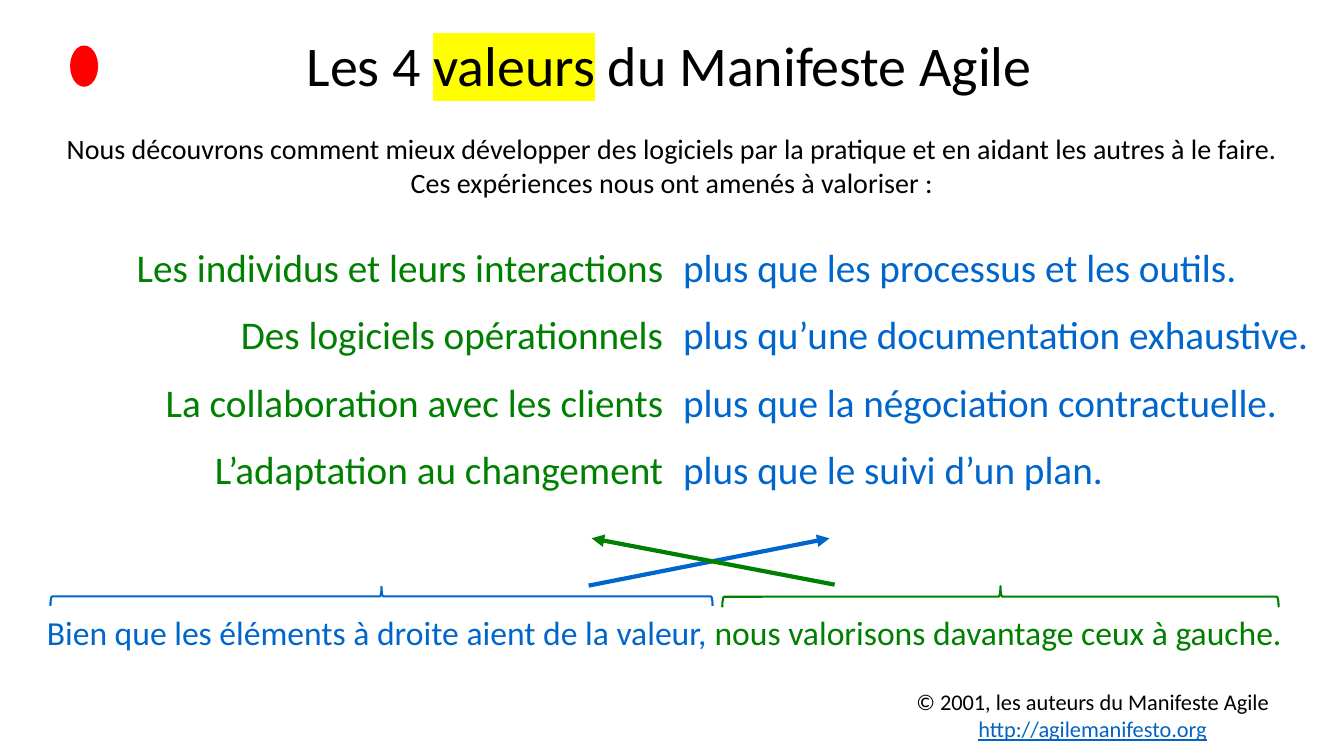
from dataclasses import dataclass

from lxml import etree
from pptx import Presentation
from pptx.dml.color import RGBColor
from pptx.enum import shapes, text
from pptx.oxml import ns
from pptx.util import Pt


@dataclass(frozen=True)
class Theme:
    font: str = "Calibri"
    black: str = "000000"
    left: str = "008000"
    right: str = "0066CC"
    web: str = "0563C1"
    dot: str = "FF0000"
    marker: str = "FFFF00"
    title: int = 40
    values: int = 28
    closing: int = 24
    intro: int = 20
    credit: int = 16


T = Theme()

# Content: a paragraph is a list of runs (words, colour, optional style)
TITLE = [[("Les 4 ", T.black), ("valeurs", T.black, "marked"),
          (" du Manifeste Agile", T.black)]]
INTRO = [
    [("Nous découvrons comment mieux développer des logiciels par la pratique "
      "et en aidant les autres à le faire.", T.black)],
    [("Ces expériences nous ont amenés à valoriser :", T.black)],
]
VALUES = [
    ("Les individus et leurs interactions", "plus que les processus et les outils."),
    ("Des logiciels opérationnels", "plus qu’une documentation exhaustive."),
    ("La collaboration avec les clients", "plus que la négociation contractuelle."),
    ("L’adaptation au changement", "plus que le suivi d’un plan."),
]
CLOSING = [[("Bien que les éléments à droite aient de la valeur, ", T.right),
            ("nous valorisons davantage ceux à gauche.", T.left)]]
CREDIT = [
    [("© 2001, les auteurs du Manifeste Agile", T.black)],
    [("http://agilemanifesto.org", T.web, "underlined")],
]

# Layout, in points
TEXTS = [  # paragraphs, size, (left, top, width, height)
    (INTRO, T.intro, (0, 90.5, 960, 55.5)),
    (CLOSING, T.closing, (-11, 433.5, 971, 36)),
    (CREDIT, T.credit, (613.5, 488, 334, 46)),
]
TABLE_LEFT, TABLE_TOP, COLUMN, ROW = 10.8, 171.4, 470, 48.25
BRACES = [  # colour, centre x, centre y, span, depth
    (T.right, 272.5, 426, 473, 13.7),
    (T.left, 714.6, 426.2, 397.4, 15.1),
]
ARROWS = [  # colour, start, end
    (T.right, (420.5, 418.3), (592.5, 384.5)),
    (T.left, (596.2, 417.6), (422.6, 384.5)),
]

deck = Presentation()
deck.slide_width, deck.slide_height = Pt(960), Pt(540)
slide = deck.slides.add_slide(deck.slide_layouts[6])


def rgb(colour):
    return RGBColor.from_string(colour)


def add_run(paragraph, size, words, colour, style=None):
    run = paragraph.add_run()
    run.text = words
    run.font.size, run.font.name = Pt(size), T.font
    run.font.color.rgb = rgb(colour)
    if style == "underlined":
        run.font.underline = True
    if style == "marked":
        highlight = etree.Element(ns.qn("a:highlight"))
        etree.SubElement(highlight, ns.qn("a:srgbClr"), val=T.marker)
        run.font._element.find(ns.qn("a:solidFill")).addnext(highlight)


def add_text(paragraphs, size, box):
    frame = slide.shapes.add_textbox(*map(Pt, box)).text_frame
    frame.word_wrap = True
    for i, runs in enumerate(paragraphs):
        paragraph = frame.add_paragraph() if i else frame.paragraphs[0]
        paragraph.alignment = text.PP_ALIGN.CENTER
        for run in runs:
            add_run(paragraph, size, *run)
    return frame


def add_outline(kind, box, colour, weight):
    shape = slide.shapes.add_shape(kind, *map(Pt, box))
    shape.shadow.inherit = False
    shape.fill.background()
    shape.line.color.rgb, shape.line.width = rgb(colour), Pt(weight)
    return shape


# Title, introduction, closing sentence and credit
heading = add_text(TITLE, T.title, (154, 20, 648, 57.6))
heading.vertical_anchor = text.MSO_ANCHOR.MIDDLE
heading.paragraphs[0].line_spacing = 0.9
for paragraphs, size, box in TEXTS:
    add_text(paragraphs, size, box)

# The four values
values = slide.shapes.add_table(
    len(VALUES), 2, Pt(TABLE_LEFT), Pt(TABLE_TOP),
    Pt(2 * COLUMN), Pt(len(VALUES) * ROW)).table
values.first_row = values.horz_banding = False
sides = [(T.left, text.PP_ALIGN.RIGHT), (T.right, text.PP_ALIGN.LEFT)]
for r, pair in enumerate(VALUES):
    for c, (words, (colour, side)) in enumerate(zip(pair, sides)):
        cell = values.cell(r, c)
        cell.fill.background()
        cell.text_frame.paragraphs[0].alignment = side
        add_run(cell.text_frame.paragraphs[0], T.values, words, colour)

# Braces over the two halves of the closing sentence
for colour, x, y, span, depth in BRACES:
    brace = add_outline(shapes.MSO_SHAPE.LEFT_BRACE,
                        (x - depth / 2, y - span / 2, depth, span), colour, 1.5)
    brace.rotation = 90

# Crossing arrows
for colour, start, end in ARROWS:
    arrow = slide.shapes.add_connector(
        shapes.MSO_CONNECTOR.STRAIGHT, *map(Pt, start + end))
    arrow.line.color.rgb, arrow.line.width = rgb(colour), Pt(3)
    etree.SubElement(arrow.line._get_or_add_ln(), ns.qn("a:tailEnd"), type="triangle")
    etree.SubElement(arrow._element.spPr, ns.qn("a:effectLst"))

# Red dot
dot = add_outline(shapes.MSO_SHAPE.OVAL, (50.6, 33, 19, 28.5), T.dot, 1)
dot.fill.solid()
dot.fill.fore_color.rgb = rgb(T.dot)

deck.save("out.pptx")
